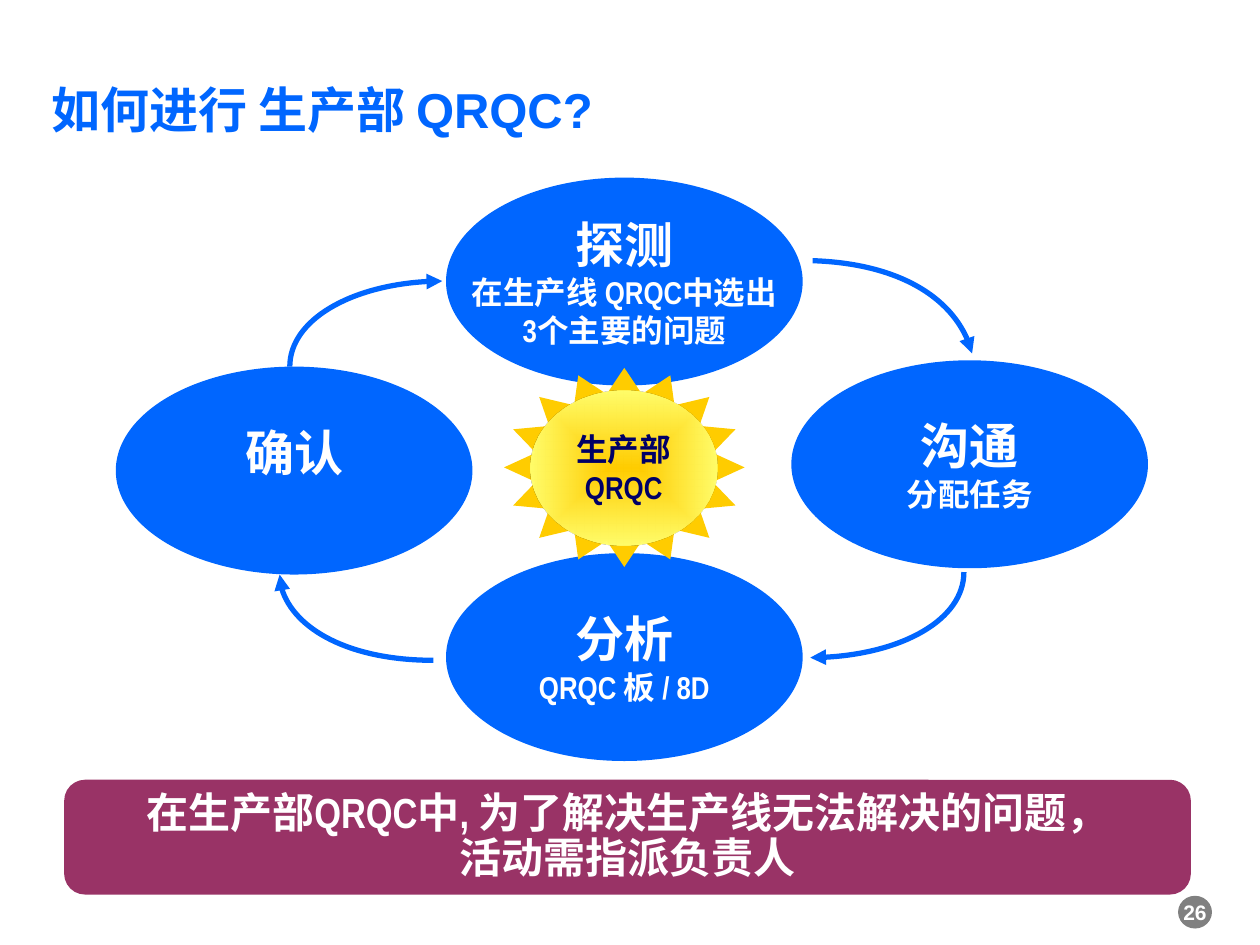
from dataclasses import dataclass

from lxml import etree
from pptx import Presentation
from pptx.dml.color import RGBColor
from pptx.enum.shapes import MSO_SHAPE
from pptx.enum.text import MSO_ANCHOR, PP_ALIGN
from pptx.oxml.ns import qn
from pptx.util import Pt

OVAL = MSO_SHAPE.OVAL
STAR = MSO_SHAPE.STAR_16_POINT
ROUNDED = MSO_SHAPE.ROUNDED_RECTANGLE
MIDDLE, BOTTOM = MSO_ANCHOR.MIDDLE, MSO_ANCHOR.BOTTOM
LEFT, CENTER = PP_ALIGN.LEFT, PP_ALIGN.CENTER

COLORS = {
    "blue": "0066FF",
    "white": "FFFFFF",
    "gold": "FFCC00",
    "lemon": "FFFF6F",
    "navy": "000066",
    "plum": "993366",
    "gray": "808080",
}
STEP_WIDTH, STEP_HEIGHT = 203.8, 118.8
HEADING_SIZE, DETAIL_SIZE = 28, 18


@dataclass
class Step:
    left: float
    top: float
    heading: str
    details: tuple[str, ...] = ()
    bottom_inset: float = 3.6


@dataclass
class Arc:
    """A cubic curve: start, two control points, end."""
    points: tuple[tuple[float, float], ...]


STEPS = [
    Step(254.9, 101.5, "探测", ("在生产线 QRQC中选出", "3个主要的问题")),
    Step(452.2, 205.9, "沟通", ("分配任务",)),
    Step(254.9, 316.1, "分析", ("QRQC 板 / 8D",)),
    Step(66.2, 209.5, "确认", bottom_inset=25),
]
ARCS = [
    Arc(((464.4, 149), (509.8, 150.5), (547.9, 170.6), (555.5, 202))),
    Arc(((550.8, 326.9), (550.8, 354.2), (511.2, 375.8), (463, 375.8))),
    Arc(((247.7, 377.3), (199.4, 377.3), (159.8, 355), (159.8, 328.3))),
    Arc(((165.6, 209.5), (165.6, 182.9), (204.5, 160.6), (252.7, 160.6))),
]


def rgb(name: str) -> RGBColor:
    return RGBColor.from_string(COLORS[name])


def add_filled(shapes, kind, left: float, top: float, width: float,
               height: float, color: str):
    shape = shapes.add_shape(kind, Pt(left), Pt(top), Pt(width), Pt(height))
    shape.shadow.inherit = False
    shape.fill.solid()
    shape.fill.fore_color.rgb = rgb(color)
    shape.line.fill.background()
    return shape


def write(box, lines: list[tuple[str, float]], *, color: str = "white",
          font: str = "Arial Narrow", align=CENTER, anchor=MIDDLE,
          wrap: bool = False, spacing=None, bottom_inset: float = 3.6) -> None:
    frame = box.text_frame
    frame.word_wrap = wrap
    frame.vertical_anchor = anchor
    frame.margin_bottom = Pt(bottom_inset)
    for index, (text, size) in enumerate(lines):
        para = frame.add_paragraph() if index else frame.paragraphs[0]
        para.alignment = align
        if spacing is not None:
            para.line_spacing = spacing
        span = para.add_run()
        span.text = text
        span.font.name = font
        span.font.size = Pt(size)
        span.font.bold = True
        span.font.color.rgb = rgb(color)


def add_step(page, step: Step) -> None:
    box = add_filled(page.shapes, OVAL, step.left, step.top,
                     STEP_WIDTH, STEP_HEIGHT, "blue")
    lines = [(step.heading, HEADING_SIZE)]
    lines += [(detail, DETAIL_SIZE) for detail in step.details]
    write(box, lines, bottom_inset=step.bottom_inset)


def add_arc(page, arc: Arc) -> None:
    start, *others = [(Pt(x), Pt(y)) for x, y in arc.points]
    builder = page.shapes.build_freeform(*start)
    builder.add_line_segments(others, close=False)
    shape = builder.convert_to_shape()
    shape.shadow.inherit = False
    shape.fill.background()
    shape.line.color.rgb = rgb("blue")
    shape.line.width = Pt(3)

    # Turn the three segments into one cubic curve
    outline = shape.element.find(".//" + qn("a:path"))
    curve = etree.SubElement(outline, qn("a:cubicBezTo"))
    for segment in outline.findall(qn("a:lnTo")):
        curve.append(segment[0])
        outline.remove(segment)

    line = shape.element.find(".//" + qn("a:ln"))
    etree.SubElement(line, qn("a:tailEnd"), type="triangle")


def shade_from_center(shape, inner: str, outer: str) -> None:
    shape.fill.gradient()
    for stop, name in zip(shape.fill.gradient_stops, (inner, outer)):
        stop.color.rgb = rgb(name)
    gradient = shape.element.find(".//" + qn("a:gradFill"))
    outer_color = gradient.findall(".//" + qn("a:srgbClr"))[-1]
    etree.SubElement(outer_color, qn("a:alpha"), val="96000")
    linear = gradient.find(qn("a:lin"))
    radial = etree.Element(qn("a:path"), path="shape")
    etree.SubElement(radial, qn("a:fillToRect"),
                     {side: "50000" for side in "ltrb"})
    gradient.replace(linear, radial)


def add_sun(page) -> None:
    group = page.shapes.add_group_shape()
    rays = add_filled(group.shapes, STAR, 288, 210.2, 137.5, 113.8, "gold")
    rays.adjustments[0] = 0.375
    disc = add_filled(group.shapes, OVAL, 303.1, 223.2, 106.6, 88.6, "gold")
    shade_from_center(disc, "gold", "lemon")
    write(disc, [("生产部", DETAIL_SIZE), ("QRQC", DETAIL_SIZE)],
          color="navy", wrap=True)


def main() -> None:
    deck = Presentation()
    deck.slide_width, deck.slide_height = Pt(720), Pt(540)
    page = deck.slides.add_slide(deck.slide_layouts[6])

    # Page number
    badge = add_filled(page.shapes, OVAL, 673.2, 511.9, 19.4, 18.7, "gray")
    write(badge, [("26", 12)], font="Arial")

    # Cycle of steps
    for step in STEPS:
        add_step(page, step)
    for arc in ARCS:
        add_arc(page, arc)
    add_sun(page)

    # Title
    title = page.shapes.add_textbox(Pt(22.3), Pt(23), Pt(664.6), Pt(59.8))
    write(title, [("如何进行 生产部 QRQC?", HEADING_SIZE)], color="blue",
          font="Arial", align=LEFT, anchor=BOTTOM, wrap=True, spacing=Pt(30))

    # Conclusion banner
    banner = add_filled(page.shapes, ROUNDED, 38.2, 447.1, 640.8, 62.6, "plum")
    banner.adjustments[0] = 0.167
    banner.line.color.rgb = rgb("plum")
    banner.line.width = Pt(3)
    write(banner, [("在生产部QRQC中, 为了解决生产线无法解决的问题，", 24),
                   ("活动需指派负责人", 24)], spacing=0.9)

    deck.save("out.pptx")


if __name__ == "__main__":
    main()
